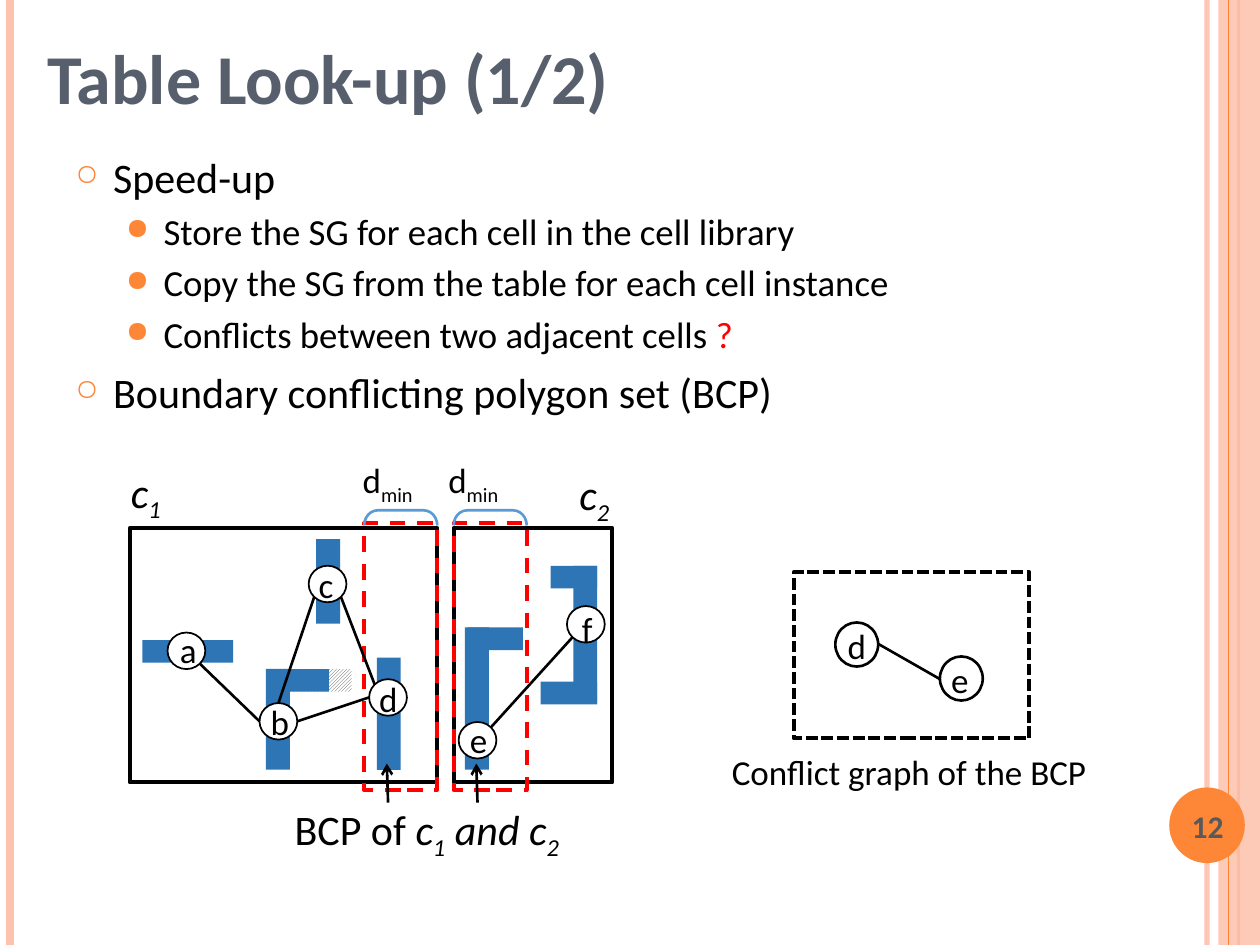
from math import cos, radians, sin

from lxml import etree
from pptx import Presentation
from pptx.dml.color import RGBColor
from pptx.enum.dml import MSO_LINE, MSO_PATTERN
from pptx.enum.shapes import MSO_CONNECTOR, MSO_SHAPE
from pptx.enum.text import MSO_ANCHOR, PP_ALIGN
from pptx.oxml.ns import qn
from pptx.util import Inches, Pt

RECT, OVAL, BRACKET = MSO_SHAPE.RECTANGLE, MSO_SHAPE.OVAL, MSO_SHAPE.LEFT_BRACKET
STRAIGHT = MSO_CONNECTOR.STRAIGHT
DASH, DOTS = MSO_LINE.DASH, MSO_LINE.SQUARE_DOT
HATCH = MSO_PATTERN.DARK_UPWARD_DIAGONAL
TOP, MIDDLE, BOTTOM = MSO_ANCHOR.TOP, MSO_ANCHOR.MIDDLE, MSO_ANCHOR.BOTTOM
LEFT, CENTER = PP_ALIGN.LEFT, PP_ALIGN.CENTER

# The slide is a grid of 100 columns by 75 rows
WIDTH, HEIGHT = Inches(10), Inches(7.5)
COL, ROW = WIDTH / 100, HEIGHT / 75

BLACK, WHITE, RED = "000000", "FFFFFF", "FF0000"
ORANGE, PEACH, BLUE, SKY = "FE8637", "FEC3AE", "2E75B6", "5B9BD5"
SUB = {"sub": True}
ITALIC = {"italic": True}
ITALIC_SUB = {"italic": True, "sub": True}

BULLETS = {
    0: {"char": "○", "scale": 70, "left": 0.3, "size": 24, "before": 6},
    1: {"char": "●", "scale": 80, "left": 0.7, "size": 21, "before": 4.2},
}
OUTLINE = [
    (0, [("Speed-up", {})]),
    (1, [("Store the SG for each cell in the cell library", {})]),
    (1, [("Copy the SG from the table for each cell instance", {})]),
    (1, [("Conflicts between two adjacent cells ", {}), ("?", {"color": RED})]),
    (0, [("Boundary conflicting polygon set (BCP)", {})]),
]
# Layout polygons of both cells: column, row, columns, rows
POLYGONS = [
    (11.3, 50.8, 7.2, 1.8), (25.1, 42.8, 1.9, 6.7), (21.1, 53.1, 1.9, 8),
    (21.2, 53.1, 4.9, 1.8), (29.9, 52.2, 1.9, 8.9), (36.9, 49.8, 1.9, 11.3),
    (37.1, 49.8, 4.4, 1.8), (42.9, 54.1, 4.5, 1.8), (45.5, 44.9, 1.9, 10.9),
    (43.7, 44.9, 3.7, 1.8),
]
# Graph nodes: column and row of the circle, then of its label
NODES = {
    "a": (13.3, 50.2, 13.3, 49.4), "b": (20.6, 55.8, 20.5, 55.1),
    "c": (24.5, 44.9, 24.3, 44.2), "d": (29.3, 53.9, 29.1, 53.3),
    "e": (36.4, 57.3, 36.3, 56.5), "f": (45, 48.1, 45.2, 47.7),
}
NODE_SIZE = (3, 2.9)
# Graph edges: node and direction in degrees at each end
EDGES = [("f", 225, "e", 45), ("b", 180, "a", 315), ("b", 90, "c", 225),
         ("b", 0, "d", 180), ("c", 315, "d", 135)]


def rgb(code):
    return RGBColor.from_string(code)


def place(left, top, width, height):
    return [round(v) for v in (left * COL, top * ROW, width * COL, height * ROW)]


def set_alpha(element, percent):
    color = next(element.iter(qn("a:srgbClr")))
    etree.SubElement(color, qn("a:alpha")).set("val", str(percent * 1000))


def set_line(line, color, weight, dash=None):
    line.color.rgb = rgb(color)
    line.width = Pt(weight)
    if dash:
        line.dash_style = dash


def add_figure(shapes, kind, area, fill=None, line=None):
    figure = shapes.add_shape(kind, *place(*area))
    figure.shadow.inherit = False
    if fill:
        figure.fill.solid()
        figure.fill.fore_color.rgb = rgb(fill)
    else:
        figure.fill.background()
    if line:
        set_line(figure.line, *line)
    else:
        figure.line.fill.background()
    return figure


def add_line(shapes, start, end, color=BLACK, weight=1.5, arrow=False):
    ends = place(*start, *end)
    line = shapes.add_connector(STRAIGHT, *ends)
    set_line(line.line, color, weight)
    if arrow:
        etree.SubElement(line.line._get_or_add_ln(), qn("a:tailEnd")).set("type", "arrow")
    etree.SubElement(line._element.spPr, qn("a:effectLst"))
    return line


def add_span(para, text, size, color=BLACK, sub=False, **formats):
    span = para.add_run()
    span.text = text
    span.font.color.rgb = rgb(color)
    for name, value in {"name": "Calibri", "size": Pt(size), **formats}.items():
        setattr(span.font, name, value)
    if sub:
        span.font._element.set("baseline", "-25000")


def add_box(shapes, area, anchor=TOP, **margins):
    box = shapes.add_textbox(*place(*area))
    frame = box.text_frame
    settings = {"word_wrap": True, "vertical_anchor": anchor, **margins}
    for name, value in settings.items():
        setattr(frame, name, value)
    return frame


def add_label(shapes, area, spans, size=20, align=LEFT, anchor=TOP):
    para = add_box(shapes, area, anchor).paragraphs[0]
    if align == LEFT:
        para._parent.margin_right = 0
    para.alignment = align
    for text, formats in spans:
        add_span(para, text, size, **formats)


def add_bullet(para, level):
    style = BULLETS[level]
    para.level = level
    para.space_before = Pt(style["before"])
    props = para._p.get_or_add_pPr()
    props.set("marL", str(Inches(style["left"])))
    props.set("indent", str(Inches(-0.3)))
    color = etree.SubElement(props, qn("a:buClr"))
    etree.SubElement(color, qn("a:srgbClr")).set("val", ORANGE)
    etree.SubElement(props, qn("a:buSzPct")).set("val", str(style["scale"] * 1000))
    etree.SubElement(props, qn("a:buChar")).set("char", style["char"])


def add_outline(shapes):
    frame = add_box(shapes, (5, 11.5, 86.7, 59.3))
    for index, (level, spans) in enumerate(OUTLINE):
        para = frame.add_paragraph() if index else frame.paragraphs[0]
        add_bullet(para, level)
        for text, formats in spans:
            add_span(para, text, BULLETS[level]["size"], **formats)


def add_side_bands(shapes):
    inner = add_line(shapes, (95.8, 0), (95.8, 75), PEACH, 3)
    set_alpha(inner._element, 93)
    add_line(shapes, (0.8, 0), (0.8, 75), PEACH, 4.5)
    add_line(shapes, (98.3, 0), (98.3, 75), ORANGE, 1.5)
    band = add_figure(shapes, RECT, (96.7, 0, 3.3, 75), PEACH)
    set_alpha(band._element, 87)
    add_line(shapes, (97.5, 0), (97.5, 75), ORANGE, 0.75)
    add_figure(shapes, OVAL, (92.8, 62.5, 6, 6), ORANGE)


def rim_point(name, degrees):
    left, top = NODES[name][:2]
    width, height = NODE_SIZE
    angle = radians(degrees)
    return (left + width / 2 * (1 + cos(angle)), top + height / 2 * (1 - sin(angle)))


def add_cells(shapes):
    # Polygons, with the hatched remainder behind them
    hatch = add_figure(shapes, RECT, (22.4, 53.1, 5.5, 1.8))
    hatch.fill.patterned()
    hatch.fill.pattern = HATCH
    hatch.fill.fore_color.rgb = rgb("525252")
    hatch.fill.back_color.rgb = rgb(WHITE)
    for area in POLYGONS:
        add_figure(shapes, RECT, area, BLUE)
    # Nodes and cell frames
    for name, (left, top, label_left, label_top) in NODES.items():
        add_figure(shapes, OVAL, (left, top, *NODE_SIZE), WHITE, (BLACK, 1))
        add_label(shapes, (label_left, label_top, 2.2, 4.4), [(name, {})])
    for left, width in ((10.3, 24.4), (36, 12.6)):
        add_figure(shapes, RECT, (left, 41.9, width, 20.2), line=(BLACK, 2.25))
    # Boundary zones with their brackets and widths
    for left, label_left in ((28.9, 27.8), (36, 34.6)):
        add_figure(shapes, RECT, (left, 41.5, 5.8, 21.2), line=(RED, 2.25, DASH))
        bracket = add_figure(shapes, BRACKET, (left + 2.3, 38.2, 1.2, 5.8), line=(SKY, 1.5))
        bracket.rotation = 90
        bracket.adjustments[0] = 0.9
        add_label(shapes, (label_left, 35.9, 6.6, 4.4), [("d", {}), ("min", SUB)])
    for digit, left, top in (("1", 9.4, 36.5), ("2", 45, 36.7)):
        add_label(shapes, (left, top, 4.8, 5), [("c", ITALIC), (digit, ITALIC_SUB)], 24)
    # Edges, then the caption and its arrows
    for first, leaving, second, arriving in EDGES:
        add_line(shapes, rim_point(first, leaving), rim_point(second, arriving))
    add_label(shapes, (22.4, 63.3, 30.6, 5),
              [("BCP of ", {}), ("c", ITALIC), ("1", ITALIC_SUB),
               (" and c", ITALIC), ("2", ITALIC_SUB)], 24)
    for column in (30.8, 37.9):
        add_line(shapes, (column, 63.7), (column - 0.1, 60.6), arrow=True)


def add_conflict_graph(shapes):
    for name, left, top, label_left in (("d", 66.3, 49.4, 66.3), ("e", 74.6, 52.1, 74.5)):
        add_figure(shapes, OVAL, (left, top, 3.4, 3.5), WHITE, (BLACK, 1.5))
        add_label(shapes, (label_left, top - 0.35, 2.3, 4.4), [(name, {})])
    add_label(shapes, (57.1, 59.1, 30.7, 4.4), [("Conflict graph of the BCP", {})])
    add_line(shapes, (74.6, 53.9), (69.7, 51.1))
    add_figure(shapes, RECT, (63, 45.4, 18.7, 13.2), line=(BLACK, 2.25, DOTS))


def main():
    deck = Presentation()
    deck.slide_width, deck.slide_height = WIDTH, HEIGHT
    page = deck.slides.add_slide(deck.slide_layouts[6])
    add_side_bands(page.shapes)
    add_label(page.shapes, (2.8, 0.5, 93.7, 9.4),
              [("Table Look-up (1/2)", {"color": "575F6D", "bold": True})], 40, anchor=BOTTOM)
    add_outline(page.shapes)
    add_label(page.shapes, (92.5, 62.7, 6.7, 5.7),
              [("12", {"color": "595959", "bold": True})], 18, CENTER, MIDDLE)
    add_cells(page.shapes)
    add_conflict_graph(page.shapes.add_group_shape().shapes)
    deck.save("out.pptx")


if __name__ == "__main__":
    main()
